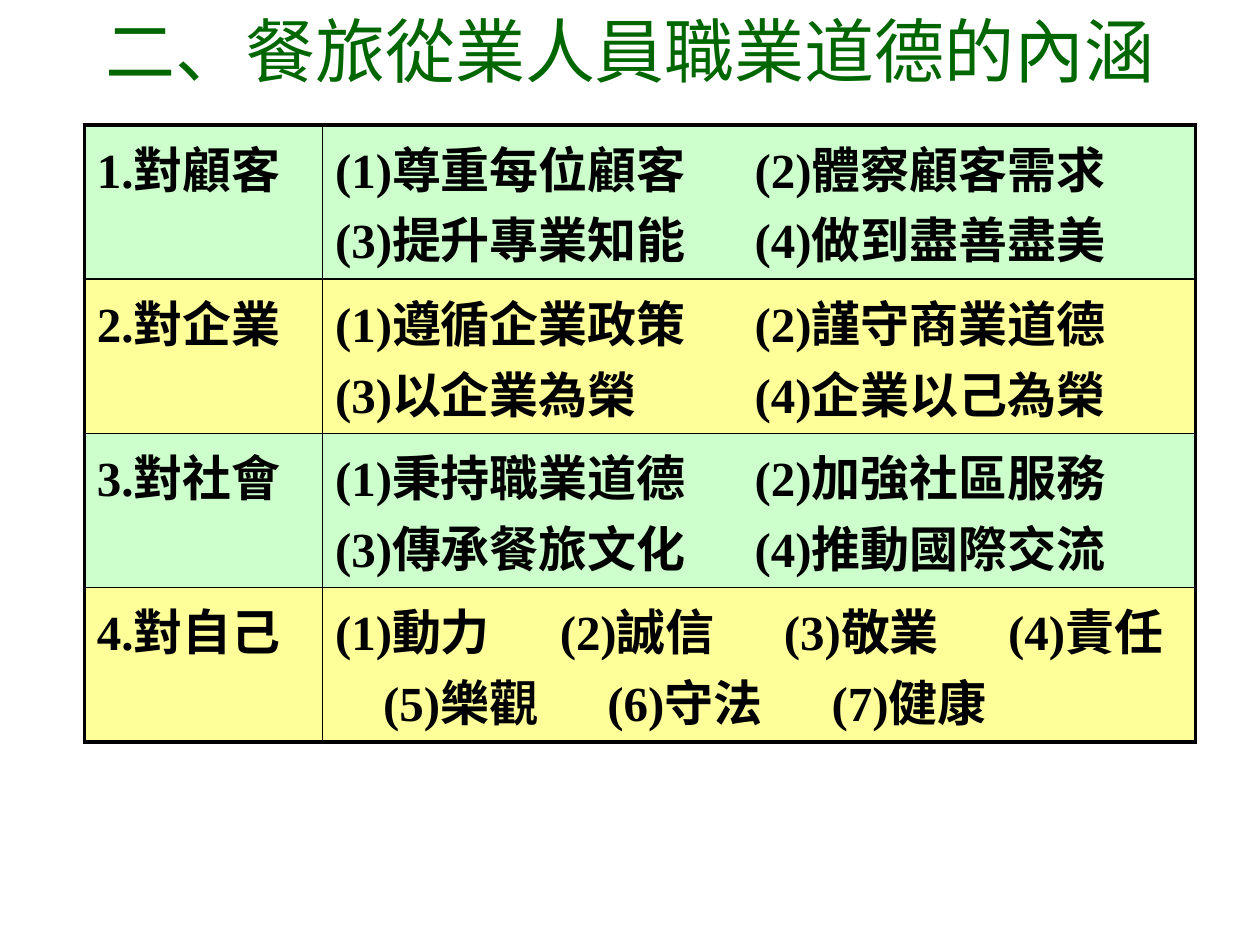
from lxml.etree import SubElement
from pptx import Presentation
from pptx.dml.color import RGBColor
from pptx.enum.text import MSO_ANCHOR as Anchor, MSO_AUTO_SIZE as AutoSize, PP_ALIGN as Align
from pptx.oxml.ns import qn
from pptx.util import Cm, Pt

GREEN, YELLOW = "CCFFCC", "FFFF99"
THICK, THIN = 2.25, 1
PAIR_TABS = [8.46]

# Each duty: heading, then its paragraphs as (text, tab stops in cm)
DUTIES = [
    ("1.對顧客", [("(1)尊重每位顧客\t(2)體察顧客需求\n(3)提升專業知能\t(4)做到盡善盡美", PAIR_TABS)]),
    ("2.對企業", [("(1)遵循企業政策\t(2)謹守商業道德\n(3)以企業為榮\t(4)企業以己為榮", PAIR_TABS)]),
    ("3.對社會", [("(1)秉持職業道德\t(2)加強社區服務\n(3)傳承餐旅文化\t(4)推動國際交流", PAIR_TABS)]),
    ("4.對自己", [("(1)動力\t(2)誠信\t(3)敬業\t(4)責任", [4.53, 9.05, 13.57]),
                ("\t(5)樂觀\t(6)守法\t(7)健康", [0.97, 5.49, 10.01])]),
]


def color(hex_value):
    return RGBColor.from_string(hex_value)


def write(paragraph, text, *, size, font, ink="000000", bold=False, align=Align.LEFT, tabs=()):
    paragraph.text = text
    paragraph.alignment = align
    if tabs:
        tab_list = SubElement(paragraph._p.get_or_add_pPr(), qn("a:tabLst"))
        for stop in tabs:
            SubElement(tab_list, qn("a:tab"), pos=str(int(Cm(stop))), algn="l")
    for run in paragraph.runs:
        run.font.size = Pt(size)
        run.font.name = font
        run.font.bold = bold
        run.font.color.rgb = color(ink)


def add_borders(cell, widths):
    """Draw black borders; widths are points for left, right, top, bottom."""
    properties = cell._tc.get_or_add_tcPr()
    for side, width in zip("LRTB", widths):
        border = SubElement(properties, qn(f"a:ln{side}"), w=str(int(Pt(width))))
        fill = SubElement(border, qn("a:solidFill"))
        SubElement(fill, qn("a:srgbClr"), val="000000")


def fill_cell(cell, paragraphs, background, borders):
    add_borders(cell, borders)
    cell.fill.solid()
    cell.fill.fore_color.rgb = color(background)
    frame = cell.text_frame
    for index, (text, tabs) in enumerate(paragraphs):
        paragraph = frame.add_paragraph() if index else frame.paragraphs[0]
        write(paragraph, text, size=28, font="Times New Roman", bold=True, tabs=tabs)


def add_title(slide, text):
    title = slide.shapes.title
    title.left, title.top, title.width, title.height = Cm(1.3), Cm(0), Cm(22.8), Cm(2)
    frame = title.text_frame
    frame.auto_size = AutoSize.NONE
    frame.vertical_anchor = Anchor.MIDDLE
    write(frame.paragraphs[0], text, size=40, font="Calibri", ink="006600", align=Align.CENTER)


def add_duties_table(slide):
    table = slide.shapes.add_table(
        len(DUTIES), 2, Cm(1.7), Cm(2.52), Cm(22.4), Cm(11.6)).table
    table.columns[0].width, table.columns[1].width = Cm(4.8), Cm(17.6)
    last = len(DUTIES) - 1
    for row, (heading, details) in enumerate(DUTIES):
        background = YELLOW if row % 2 else GREEN
        top = THIN if row else THICK
        bottom = THICK if row == last else THIN
        fill_cell(table.cell(row, 0), [(heading, ())], background, (THICK, THIN, top, bottom))
        fill_cell(table.cell(row, 1), details, background, (THIN, THICK, top, bottom))


def main():
    deck = Presentation()
    deck.slide_width, deck.slide_height = Cm(25.4), Cm(19.05)
    slide = deck.slides.add_slide(deck.slide_layouts[5])
    add_title(slide, "二、餐旅從業人員職業道德的內涵")
    add_duties_table(slide)
    deck.save("out.pptx")


if __name__ == "__main__":
    main()
